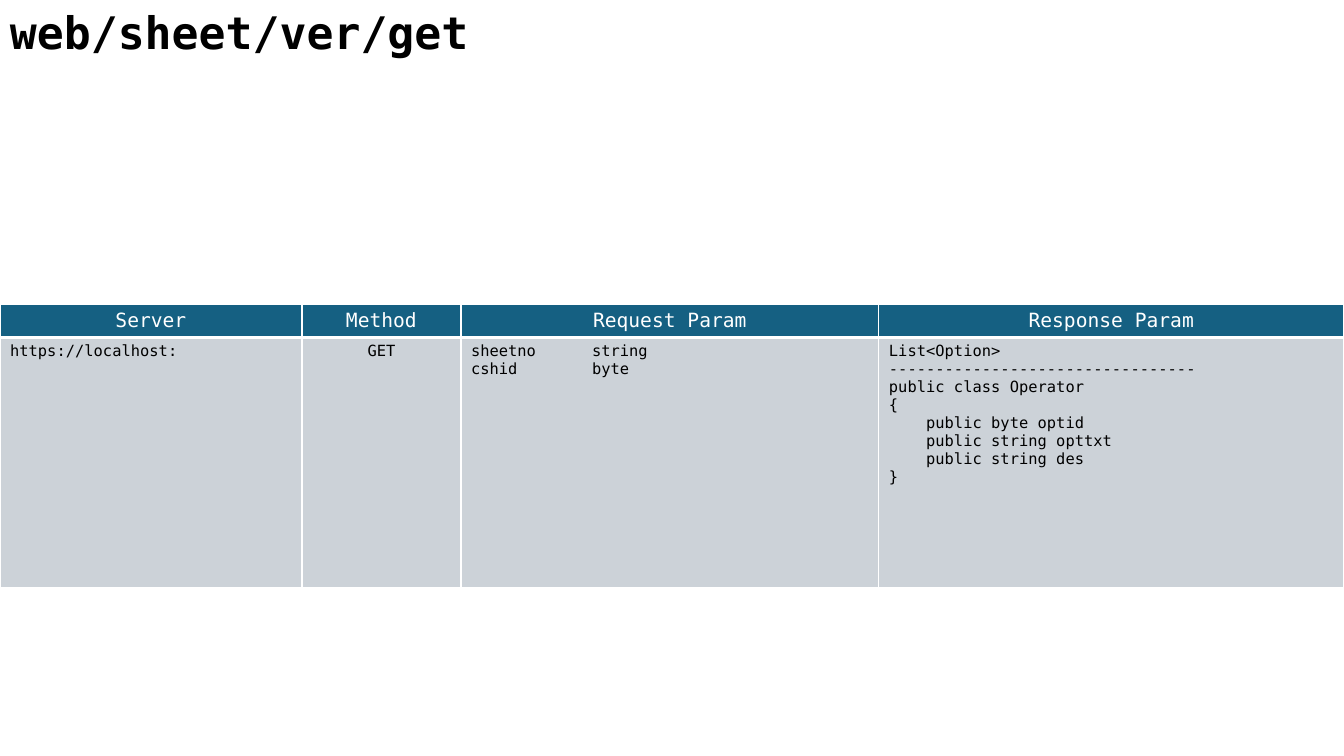
from dataclasses import dataclass

from lxml.etree import SubElement
from pptx import Presentation
from pptx.dml.color import RGBColor
from pptx.enum.text import MSO_AUTO_SIZE, PP_ALIGN
from pptx.oxml.ns import qn
from pptx.util import Emu, Pt


@dataclass(frozen=True)
class Theme:
    """Colours, font and type sizes of the deck."""

    font: str = "DejaVu Sans Mono"
    ink: str = "000000"
    paper: str = "FFFFFF"
    header_fill: str = "156082"
    body_fill: str = "CCD2D8"
    title_size: int = 32
    header_size: int = 14
    body_size: int = 11


THEME = Theme()
PAGE_WIDTH, PAGE_HEIGHT = 1344, 756
COLUMNS = [302, 159, 418, 465]
ROWS = [33, 250]
TYPE_TAB = 121
HEADERS = ["Server", "Method", "Request Param", "Response Param"]
RESPONSE = """List<Option>
---------------------------------
public class Operator
{
    public byte optid
    public string opttxt
    public string des
}"""
VALUES = ["https://localhost:", "GET", "sheetno\tstring\ncshid\tbyte", RESPONSE]


def px(length):
    """Turn pixels into EMU."""
    return Emu(round(length * 914400 / 100.8))


def style_text(frame, size, color, bold=False, align=PP_ALIGN.LEFT):
    """Format every paragraph and run of a text frame."""
    for para in frame.paragraphs:
        para.alignment = align
        for span in para.runs:
            span.font.name = THEME.font
            span.font.size = Pt(size)
            span.font.bold = bold
            span.font.color.rgb = RGBColor.from_string(color)


def add_tab_stop(para, position):
    """Give a paragraph one left tab stop."""
    tabs = SubElement(para._p.get_or_add_pPr(), qn("a:tabLst"))
    SubElement(tabs, qn("a:tab"), pos=str(px(position)), algn="l")


def add_borders(cell, bottom):
    """Draw white cell borders, with a chosen bottom width in points."""
    properties = cell._tc.get_or_add_tcPr()
    for side, width in (("L", 1), ("R", 1), ("T", 1), ("B", bottom)):
        line = SubElement(properties, qn(f"a:ln{side}"), w=str(Pt(width)))
        fill = SubElement(line, qn("a:solidFill"))
        SubElement(fill, qn("a:srgbClr"), val=THEME.paper)


def fill_cell(cell, text, fill, bottom):
    """Set the text, borders and background of a cell."""
    cell.text_frame.text = text
    add_borders(cell, bottom)
    cell.fill.solid()
    cell.fill.fore_color.rgb = RGBColor.from_string(fill)


def add_title(page, left, top, width, height):
    """Place the endpoint title."""
    box = page.shapes.add_textbox(px(left), px(top), px(width), px(height))
    frame = box.text_frame
    frame.word_wrap = True
    frame.auto_size = MSO_AUTO_SIZE.SHAPE_TO_FIT_TEXT
    frame.text = "web/sheet/ver/get"
    style_text(frame, THEME.title_size, THEME.ink, bold=True)


def add_endpoint_table(page, left, top, width, height):
    """Place the table that describes the endpoint."""
    table = page.shapes.add_table(
        len(ROWS), len(COLUMNS), px(left), px(top), px(width), px(height)
    ).table
    table.horz_banding = False
    for row, row_height in zip(table.rows, ROWS):
        row.height = px(row_height)
    for index, column_width in enumerate(COLUMNS):
        table.columns[index].width = px(column_width)
        header, body = table.cell(0, index), table.cell(1, index)
        fill_cell(header, HEADERS[index], THEME.header_fill, 3)
        style_text(header.text_frame, THEME.header_size, THEME.paper,
                   align=PP_ALIGN.CENTER)
        fill_cell(body, VALUES[index], THEME.body_fill, 1)
        for para in body.text_frame.paragraphs:
            if "\t" in para.text:
                add_tab_stop(para, TYPE_TAB)
        centred = HEADERS[index] == "Method"
        style_text(body.text_frame, THEME.body_size, THEME.ink,
                   align=PP_ALIGN.CENTER if centred else PP_ALIGN.LEFT)


def main():
    """Build and save the deck."""
    deck = Presentation()
    deck.slide_width, deck.slide_height = px(PAGE_WIDTH), px(PAGE_HEIGHT)
    page = deck.slides.add_slide(deck.slide_layouts[6])
    add_title(page, 0, 0, 953, 65)
    add_endpoint_table(page, 0, 304, sum(COLUMNS), sum(ROWS))
    deck.save("out.pptx")


if __name__ == "__main__":
    main()
